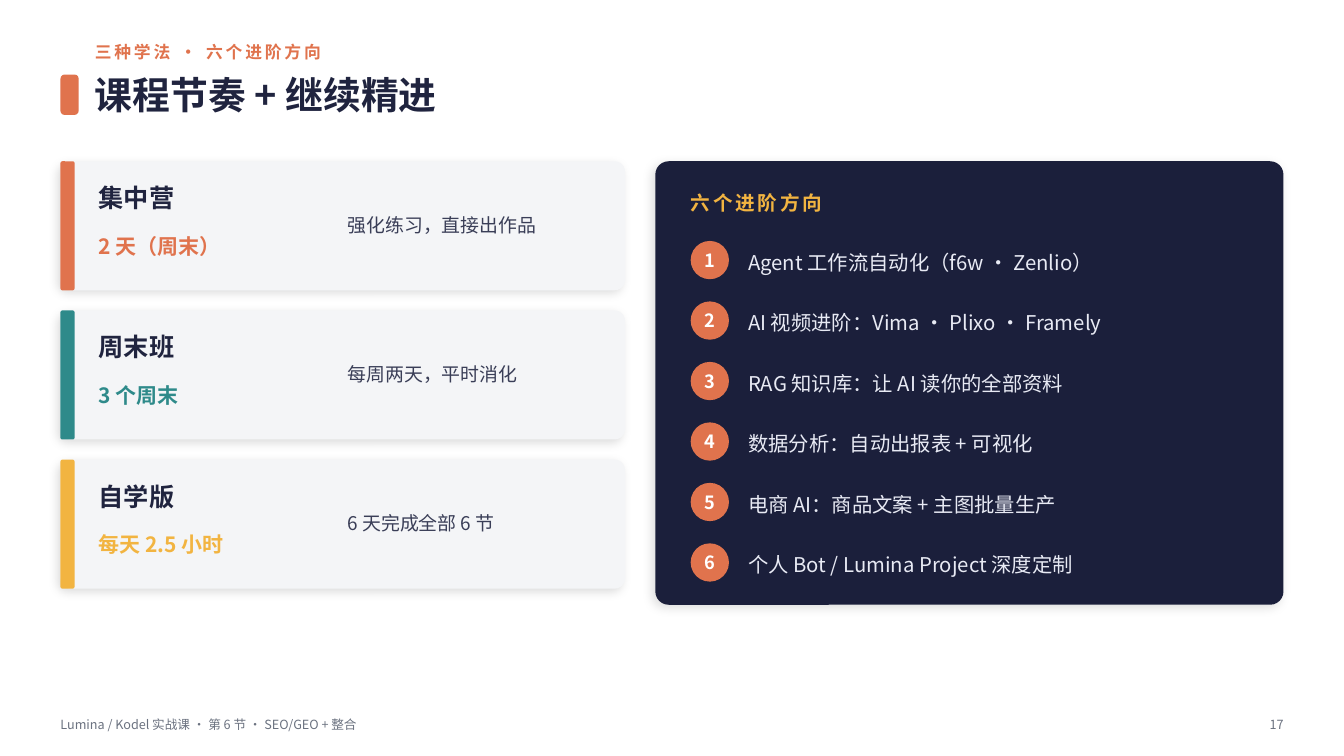
import dataclasses
import typing

import lxml.etree
import pptx
import pptx.dml.color
import pptx.enum.shapes
import pptx.enum.text
import pptx.oxml.ns
import pptx.shapes.autoshape
import pptx.slide
import pptx.util

Inches = pptx.util.Inches
Kind = pptx.enum.shapes.MSO_SHAPE
Align = pptx.enum.text.PP_ALIGN


@dataclasses.dataclass(frozen=True)
class Theme:
    font: str = "Noto Sans CJK SC"
    coral: str = "E0734D"
    teal: str = "2E8A8A"
    gold: str = "F2B441"
    ink: str = "20243F"
    slate: str = "3A3E57"
    navy: str = "1B1F3B"
    mist: str = "F4F5F7"
    pale: str = "E8EAF4"
    white: str = "FFFFFF"
    gray: str = "6B7280"
    title: float = 27
    name: float = 18
    time: float = 15
    topic: float = 14.5
    head: float = 14
    note: float = 13.5
    badge: float = 13
    kicker: float = 12
    foot: float = 9


THEME = Theme()


class Box(typing.NamedTuple):
    left: float
    top: float
    width: float
    height: float


class Plan(typing.NamedTuple):
    name: str
    time: str
    note: str
    color: str


PLANS = [
    Plan("集中营", "2 天（周末）", "强化练习，直接出作品", THEME.coral),
    Plan("周末班", "3 个周末", "每周两天，平时消化", THEME.teal),
    Plan("自学版", "每天 2.5 小时", "6 天完成全部 6 节", THEME.gold),
]
TOPICS = [
    "Agent 工作流自动化（f6w · Zenlio）",
    "AI 视频进阶：Vima · Plixo · Framely",
    "RAG 知识库：让 AI 读你的全部资料",
    "数据分析：自动出报表 + 可视化",
    "电商 AI：商品文案 + 主图批量生产",
    "个人 Bot / Lumina Project 深度定制",
]
PLAN_STEP = 1.48
TOPIC_STEP = 0.6


def add_text(slide: pptx.slide.Slide, box: Box, text: str, size: float, color: str,
             bold: bool = False, align: Align = Align.LEFT, gap: float = 0) -> None:
    """Add one line of text; gap is the letter spacing in points."""
    frame = slide.shapes.add_textbox(*map(Inches, box)).text_frame
    frame.word_wrap = True
    frame.margin_left = frame.margin_right = frame.margin_top = frame.margin_bottom = 0
    frame.vertical_anchor = pptx.enum.text.MSO_ANCHOR.MIDDLE
    frame.text = text
    line = frame.paragraphs[0]
    line.alignment = align
    run = line.runs[0]
    run.font.name = THEME.font
    run.font.size = pptx.util.Pt(size)
    run.font.bold = bold
    run.font.color.rgb = pptx.dml.color.RGBColor.from_string(color)
    props = run._r.get_or_add_rPr()
    if gap:
        props.set("spc", str(round(gap * 100)))
    lxml.etree.SubElement(props, pptx.oxml.ns.qn("a:ea"), typeface=THEME.font)


def add_block(slide: pptx.slide.Slide, box: Box, color: str,
              curve: typing.Optional[float] = None) -> pptx.shapes.autoshape.Shape:
    """Add a plain filled shape: rounded if curve is given, else an oval."""
    kind = Kind.OVAL if curve is None else Kind.ROUNDED_RECTANGLE
    shape = slide.shapes.add_shape(kind, *map(Inches, box))
    if curve is not None:
        shape.adjustments[0] = curve
    shape.fill.solid()
    shape.fill.fore_color.rgb = pptx.dml.color.RGBColor.from_string(color)
    shape.line.fill.background()
    shape.shadow.inherit = False
    return shape


def add_shade(shape: pptx.shapes.autoshape.Shape) -> None:
    qn = pptx.oxml.ns.qn
    effects = shape._element.spPr.find(qn("a:effectLst"))
    shade = lxml.etree.SubElement(
        effects, qn("a:outerShdw"), blurRad=str(pptx.util.Pt(7)),
        dist=str(pptx.util.Pt(3)), dir=str(135 * 60000), algn="bl", rotWithShape="0")
    black = lxml.etree.SubElement(shade, qn("a:srgbClr"), val="000000")
    lxml.etree.SubElement(black, qn("a:alpha"), val="12000")


def draw_head(slide: pptx.slide.Slide) -> None:
    add_text(slide, Box(0.94, 0.36, 11.79, 0.3), "三种学法 · 六个进阶方向",
             THEME.kicker, THEME.coral, bold=True, gap=2)
    add_block(slide, Box(0.6, 0.74, 0.18, 0.4), THEME.coral, 0.22)
    add_text(slide, Box(0.94, 0.64, 11.79, 0.6), "课程节奏 + 继续精进",
             THEME.title, THEME.ink, bold=True)


def draw_plan(slide: pptx.slide.Slide, plan: Plan, top: float) -> None:
    add_shade(add_block(slide, Box(0.6, top, 5.6, 1.28), THEME.mist, 0.08))
    add_block(slide, Box(0.6, top, 0.14, 1.28), plan.color, 0.14)
    add_text(slide, Box(0.98, top + 0.12, 2.2, 0.48), plan.name,
             THEME.name, THEME.ink, bold=True)
    add_text(slide, Box(0.98, top + 0.63, 2.3, 0.42), plan.time,
             THEME.time, plan.color, bold=True)
    add_text(slide, Box(3.45, top + 0.28, 2.6, 0.7), plan.note, THEME.note, THEME.slate)


def draw_topic(slide: pptx.slide.Slide, number: int, topic: str, top: float) -> None:
    badge = Box(6.85, top, 0.38, 0.38)
    add_block(slide, badge, THEME.coral)
    add_text(slide, badge, str(number), THEME.badge, THEME.white,
             bold=True, align=Align.CENTER)
    add_text(slide, Box(7.42, top - 0.04, 5.1, 0.5), topic, THEME.topic, THEME.pale)


def draw_foot(slide: pptx.slide.Slide) -> None:
    add_text(slide, Box(0.6, 7.04, 9, 0.3), "Lumina / Kodel 实战课 · 第 6 节 · SEO/GEO + 整合",
             THEME.foot, THEME.gray)
    add_text(slide, Box(12.03, 7.04, 0.7, 0.3), "17", THEME.foot, THEME.gray,
             align=Align.RIGHT)


def main() -> None:
    deck = pptx.Presentation()
    deck.slide_width, deck.slide_height = Inches(13.33), Inches(7.5)
    slide = deck.slides.add_slide(deck.slide_layouts[6])
    draw_head(slide)
    for row, plan in enumerate(PLANS):
        draw_plan(slide, plan, 1.6 + row * PLAN_STEP)
    add_shade(add_block(slide, Box(6.5, 1.6, 6.23, 4.4), THEME.navy, 0.03))
    add_text(slide, Box(6.85, 1.82, 5.7, 0.38), "六个进阶方向",
             THEME.head, THEME.gold, bold=True, gap=2)
    for row, topic in enumerate(TOPICS):
        draw_topic(slide, row + 1, topic, 2.39 + row * TOPIC_STEP)
    draw_foot(slide)
    deck.save("out.pptx")


if __name__ == "__main__":
    main()
